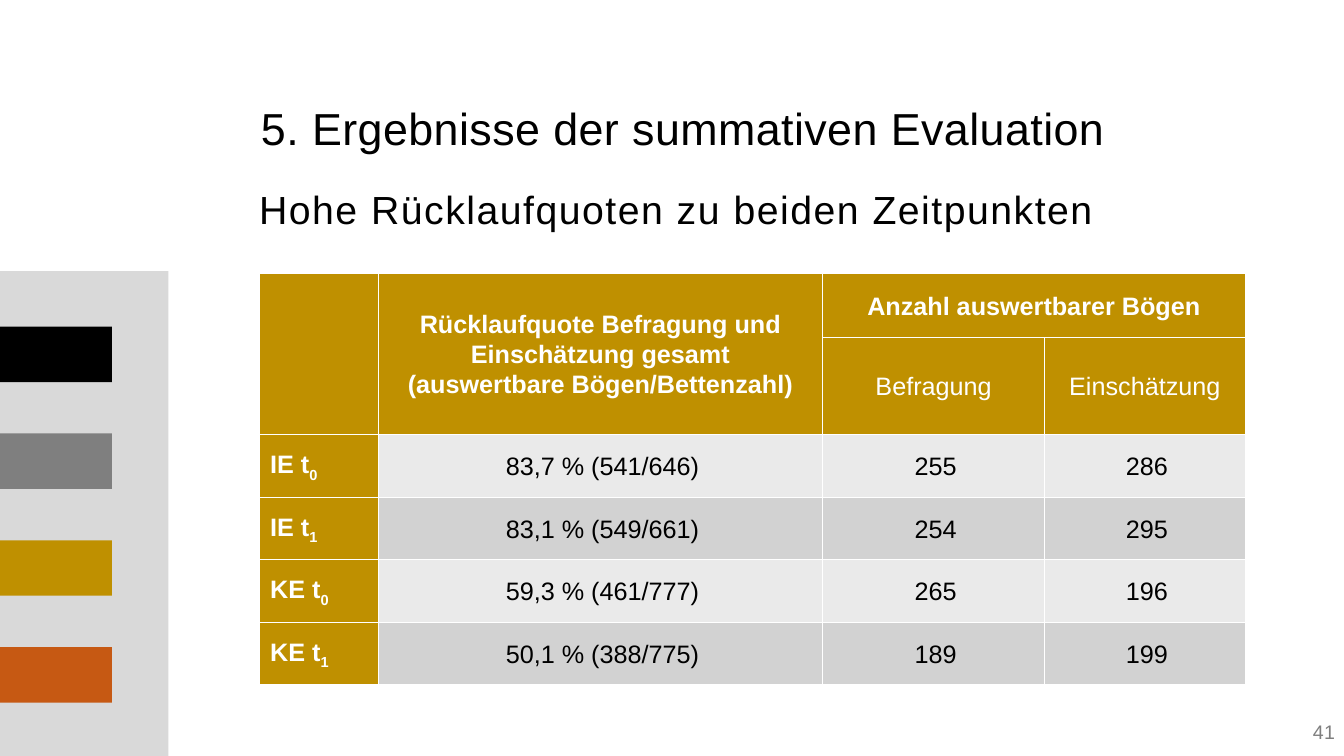
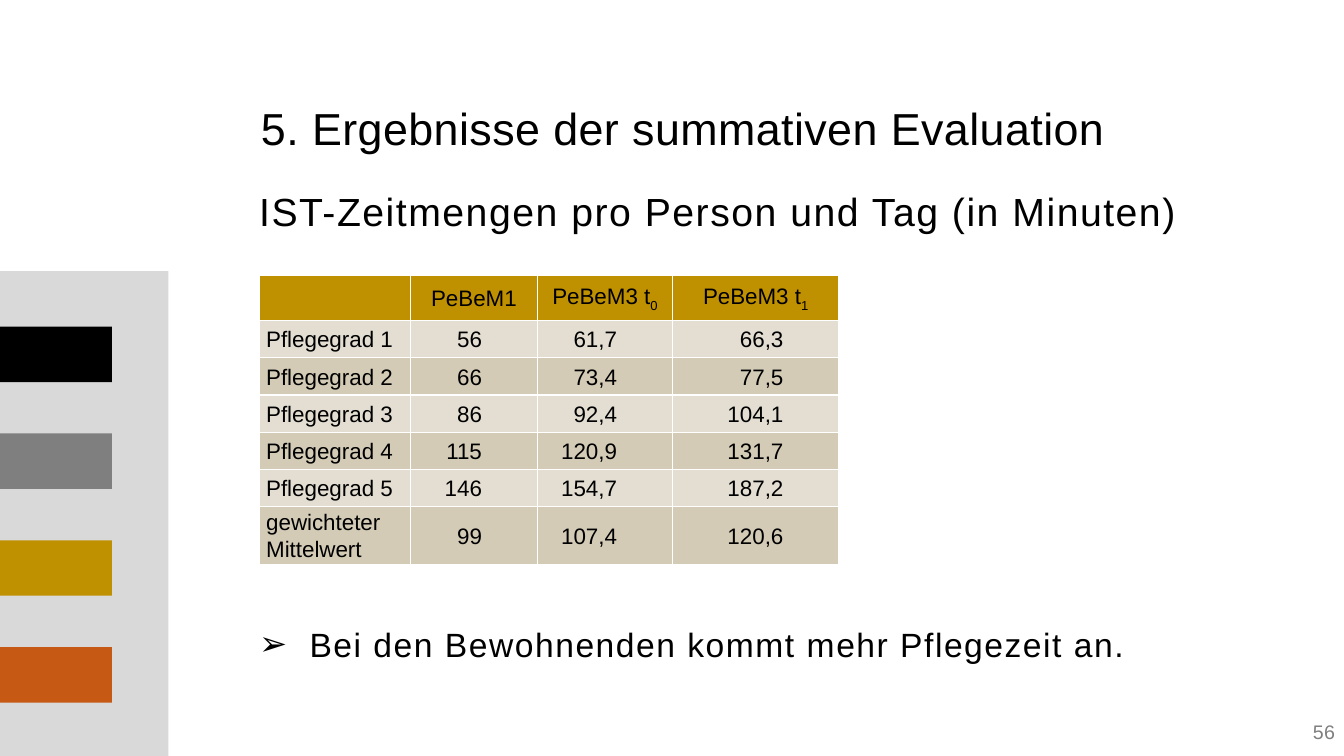
from lxml.etree import SubElement
from pptx import Presentation
from pptx.dml.color import RGBColor
from pptx.enum.shapes import MSO_SHAPE
from pptx.enum.text import MSO_ANCHOR, PP_ALIGN
from pptx.oxml import parse_xml
from pptx.oxml.ns import nsdecls, qn
from pptx.util import Inches, Pt

BLACK = RGBColor(0x00, 0x00, 0x00)
WHITE = RGBColor(0xFF, 0xFF, 0xFF)
GRAY = RGBColor(0x7F, 0x7F, 0x7F)
PANEL_GRAY = RGBColor(0xD9, 0xD9, 0xD9)
GOLD = RGBColor(0xBF, 0x90, 0x00)
ORANGE = RGBColor(0xC6, 0x59, 0x13)
GRAY_ROWS = (RGBColor(0xEA, 0xEA, 0xEA), RGBColor(0xD2, 0xD2, 0xD2))
SAND_ROWS = (RGBColor(0xE3, 0xDE, 0xD1), RGBColor(0xD3, 0xCB, 0xB6))

FONT = "Arial"
CONTENT_LEFT = 2.57
CONTENT_WIDTH = 10.35
TITLE = "5. Ergebnisse der summativen Evaluation"
BANDS = (BLACK, GRAY, GOLD, ORANGE)
BAND_TOP, BAND_STEP = 3.24, 1.06

RESPONSE_RATES = {
    "top": 2.71,
    "columns": (1.18, 4.41, 2.2, 1.99),
    "heights": (0.64, 0.9, 0.62, 0.62, 0.62, 0.62),
    "header_rows": 2,
    "merges": (((0, 0), (1, 0)), ((0, 1), (1, 1)), ((0, 2), (0, 3))),
    "rows": (
        ("", "Rücklaufquote Befragung und\vEinschätzung gesamt\v(auswertbare Bögen/Bettenzahl)",
         "Anzahl auswertbarer Bögen", ""),
        ("", "", "Befragung", "Einschätzung"),
        ("IE t_0", "83,7 % (541/646)", "255", "286"),
        ("IE t_1", "83,1 % (549/661)", "254", "295"),
        ("KE t_0", "59,3 % (461/777)", "265", "196"),
        ("KE t_1", "50,1 % (388/775)", "189", "199"),
    ),
    "size": 18,
    "stripes": GRAY_ROWS,
    "header_color": WHITE,
    "gold_labels": True,
    "label_inset": 0.11,
    "value_insets": (0.11, 0.07),
    "value_align": PP_ALIGN.CENTER,
}

CARE_MINUTES = {
    "top": 2.73,
    "columns": (1.5, 1.26, 1.34, 1.65),
    "heights": (0.45, 0.37, 0.37, 0.37, 0.37, 0.37, 0.53),
    "header_rows": 1,
    "merges": (),
    "rows": (
        ("", "PeBeM1", "PeBeM3 t_0", "PeBeM3 t_1"),
        ("Pflegegrad 1", "56", "61,7", "66,3"),
        ("Pflegegrad 2", "66", "73,4", "77,5"),
        ("Pflegegrad 3", "86", "92,4", "104,1"),
        ("Pflegegrad 4", "115", "120,9", "131,7"),
        ("Pflegegrad 5", "146", "154,7", "187,2"),
        ("gewichteter Mittelwert", "99", "107,4", "120,6"),
    ),
    "size": 16,
    "stripes": SAND_ROWS,
    "header_color": BLACK,
    "gold_labels": False,
    "label_inset": 0.07,
    "value_insets": (0.07, 0.55),
    "value_align": PP_ALIGN.RIGHT,
}

SLIDES = (
    {"number": "41", "subtitle": "Hohe Rücklaufquoten zu beiden Zeitpunkten",
     "subtitle_top": 1.84, "table": RESPONSE_RATES},
    {"number": "56", "subtitle": "IST-Zeitmengen pro Person und Tag (in Minuten)",
     "subtitle_top": 1.86, "table": CARE_MINUTES,
     "conclusion": "Bei den Bewohnenden kommt mehr Pflegezeit an."},
)


def format_run(run, size, color, bold=False):
    run.font.name = FONT
    run.font.size = Pt(size)
    run.font.color.rgb = color
    run.font.bold = bold


def add_rect(slide, top, width, height, color):
    rect = slide.shapes.add_shape(
        MSO_SHAPE.RECTANGLE, 0, Inches(top), Inches(width), Inches(height))
    rect.shadow.inherit = False
    rect.fill.solid()
    rect.fill.fore_color.rgb = color
    rect.line.fill.background()


def add_text(slide, text, box, size, color=BLACK, spacing=0, inset=(0, 0)):
    frame = slide.shapes.add_textbox(*map(Inches, box)).text_frame
    frame.word_wrap = True
    frame.margin_left = frame.margin_right = Inches(inset[0])
    frame.margin_top = frame.margin_bottom = Inches(inset[1])
    paragraph = frame.paragraphs[0]
    paragraph.text = text
    run = paragraph.runs[0]
    format_run(run, size, color)
    run._r.get_or_add_rPr().set("spc", str(round(spacing * 100)))
    return frame


def add_arrow_bullet(paragraph):
    properties = paragraph._p.get_or_add_pPr()
    properties.set("marL", str(Inches(0.5)))
    properties.set("indent", str(-Inches(0.5)))
    SubElement(properties, qn("a:buFont"), typeface=FONT)
    SubElement(properties, qn("a:buChar"), char="➢")


def add_borders(cell):
    properties = cell._tc.get_or_add_tcPr()
    for index, side in enumerate(("lnL", "lnR", "lnT", "lnB")):
        properties.insert(index, parse_xml(
            f'<a:{side} {nsdecls("a")} w="{Pt(1)}"><a:solidFill>'
            f'<a:srgbClr val="{WHITE}"/></a:solidFill></a:{side}>'))


def fill_cell(cell, text, row, column, data):
    header = row < data["header_rows"]
    label = column == 0
    gold = header or (label and data["gold_labels"])
    cell.fill.solid()
    cell.fill.fore_color.rgb = (
        GOLD if gold else data["stripes"][(row - data["header_rows"]) % 2])
    add_borders(cell)
    cell.vertical_anchor = MSO_ANCHOR.MIDDLE
    if header:
        insets, align = (0.07, 0.07), PP_ALIGN.CENTER
    elif label:
        insets, align = (data["label_inset"], 0.07), PP_ALIGN.LEFT
    else:
        insets, align = data["value_insets"], data["value_align"]
    cell.margin_left, cell.margin_right = map(Inches, insets)
    cell.margin_top = cell.margin_bottom = 0
    if not text:
        return
    paragraph = cell.text_frame.paragraphs[0]
    base, _, subscript = text.partition("_")
    paragraph.text = base
    if subscript:
        lowered = paragraph.add_run()
        lowered.text = subscript
        lowered._r.get_or_add_rPr().set("baseline", "-25000")
    paragraph.alignment = align
    paragraph.line_spacing = 1.07
    bold = data["gold_labels"] and (row == 0 or label)
    for run in paragraph.runs:
        format_run(run, data["size"], data["header_color"] if gold else BLACK, bold)


def add_data_table(slide, data):
    columns, heights = data["columns"], data["heights"]
    table = slide.shapes.add_table(
        len(heights), len(columns), Inches(CONTENT_LEFT), Inches(data["top"]),
        Inches(sum(columns)), Inches(sum(heights))).table
    table.first_row = table.horz_banding = False
    for column, width in zip(table.columns, columns):
        column.width = Inches(width)
    for row, height in zip(table.rows, heights):
        row.height = Inches(height)
    for first, last in data["merges"]:
        table.cell(*first).merge(table.cell(*last))
    for row, texts in enumerate(data["rows"]):
        for column, text in enumerate(texts):
            fill_cell(table.cell(row, column), text, row, column, data)


def add_frame(slide, number):
    add_rect(slide, 2.69, 1.67, 4.81, PANEL_GRAY)
    for index, color in enumerate(BANDS):
        add_rect(slide, BAND_TOP + index * BAND_STEP, 1.11, 0.55, color)
    footer = add_text(slide, number, (12.22, 7.21, 1.02, 0.21), 14, GRAY, 0.2)
    footer.paragraphs[0].alignment = PP_ALIGN.RIGHT
    footer.paragraphs[0].line_spacing = Pt(12)
    title = add_text(slide, TITLE, (2.49, 0.92, 9.76, 0.7), 32,
                     spacing=0.3, inset=(0.1, 0.05))
    title.vertical_anchor = MSO_ANCHOR.MIDDLE


def main():
    deck = Presentation()
    deck.slide_width, deck.slide_height = Inches(13.33), Inches(7.5)
    for content in SLIDES:
        slide = deck.slides.add_slide(deck.slide_layouts[6])
        add_frame(slide, content["number"])
        add_text(slide, content["subtitle"],
                 (CONTENT_LEFT, content["subtitle_top"], CONTENT_WIDTH, 0.6), 28, spacing=1.1)
        add_data_table(slide, content["table"])
        if "conclusion" in content:
            conclusion = add_text(slide, content["conclusion"],
                                  (CONTENT_LEFT, 6.19, CONTENT_WIDTH, 0.56), 24, spacing=1.1)
            add_arrow_bullet(conclusion.paragraphs[0])
    deck.save("out.pptx")


if __name__ == "__main__":
    main()
